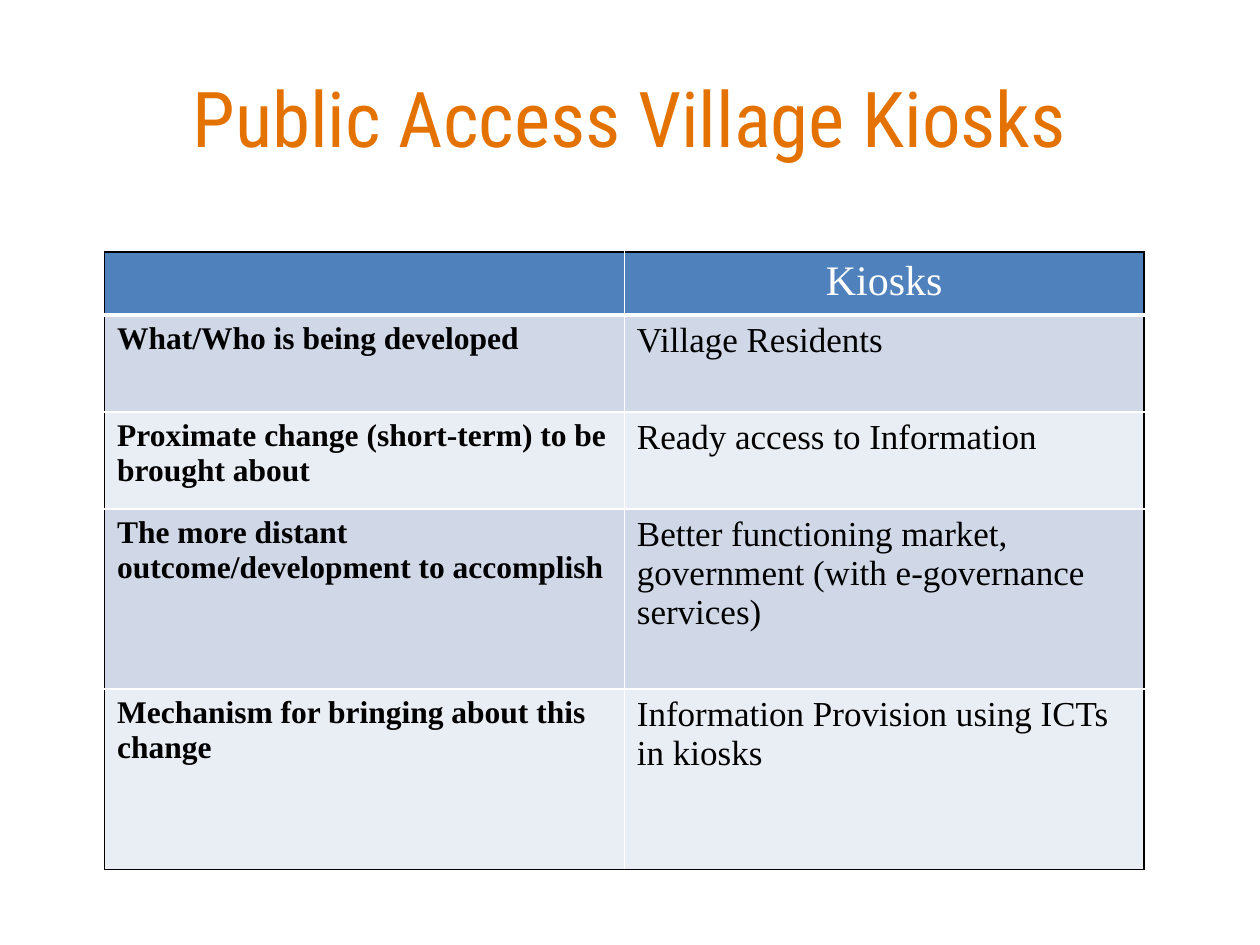
from pptx import Presentation
from pptx.dml.color import RGBColor
from pptx.enum.text import MSO_ANCHOR as Anchor, PP_ALIGN as Align
from pptx.oxml.ns import qn
from pptx.util import Inches, Pt
from lxml.etree import SubElement as Sub

SERIF = "Times New Roman"
HEAD, BANDS = "4F81BD", ("D0D8E8", "E9EDF4")
BLACK, WHITE = "000000", "FFFFFF"
ROWS = [
    ("", "Kiosks"),
    ("What/Who is being developed", "Village Residents"),
    ("Proximate change (short-term) to be brought about",
     "Ready access to Information"),
    ("The more distant outcome/development to accomplish",
     "Better functioning market, government (with e-governance services)"),
    ("Mechanism for bringing about this change",
     "Information Provision using ICTs in kiosks"),
]
TALL = (0.5, 0.77, 0.77, 1.43, 1.43)


def color(code):
    return RGBColor.from_string(code)


def style(para, hue, align=Align.LEFT, **form):
    para.alignment = align
    for key, val in form.items():
        setattr(para.font, key, val)
    para.font.color.rgb = color(hue)


def edge(cell, side, hue, width):
    """Draw one border; call before the cell is filled."""
    line = Sub(cell._tc.get_or_add_tcPr(), qn(f"a:ln{side}"), w=str(Pt(width)))
    Sub(Sub(line, qn("a:solidFill")), qn("a:srgbClr"), val=hue)


def add_title(slide, box, text):
    title = slide.shapes.title
    title.left, title.top, title.width, title.height = map(Inches, box)
    frame = title.text_frame
    frame.text = text
    frame.word_wrap = True
    frame.vertical_anchor = Anchor.MIDDLE
    style(frame.paragraphs[0], "E47200", Align.CENTER,
          name="Roboto Condensed", size=Pt(44))


def add_grid(slide, box, rows, tall):
    last, end = len(rows) - 1, len(rows[0]) - 1
    grid = slide.shapes.add_table(last + 1, end + 1, *map(Inches, box)).table
    for row, high in zip(grid.rows, tall):
        row.height = Inches(high)
    for r, row in enumerate(rows):
        for c, text in enumerate(row):
            cell = grid.cell(r, c)
            outer = {"L": c == 0, "R": c == end, "T": r == 0, "B": r == last}
            for side, out in outer.items():
                thick = (r, side) in ((0, "B"), (1, "T"))
                edge(cell, side, BLACK if out else WHITE, 3 if thick else 1)
            cell.fill.solid()
            cell.fill.fore_color.rgb = color(BANDS[(r - 1) % 2] if r else HEAD)
            cell.text = text
            para = cell.text_frame.paragraphs[0]
            if r == 0:
                style(para, WHITE, Align.CENTER,
                      name=SERIF, size=Pt(24), bold=False)
            else:
                style(para, BLACK, name=SERIF,
                      size=Pt(20 if c else 18), bold=c == 0)


def main():
    deck = Presentation()
    deck.slide_width, deck.slide_height = Inches(10), Inches(7.5)
    slide = deck.slides.add_slide(deck.slide_layouts[5])
    add_grid(slide, (0.83, 2, 8.25, 4.9), ROWS, TALL)
    add_title(slide, (0.5, 0.3, 9, 1.25), "Public Access Village Kiosks")
    deck.save("out.pptx")


if __name__ == "__main__":
    main()
